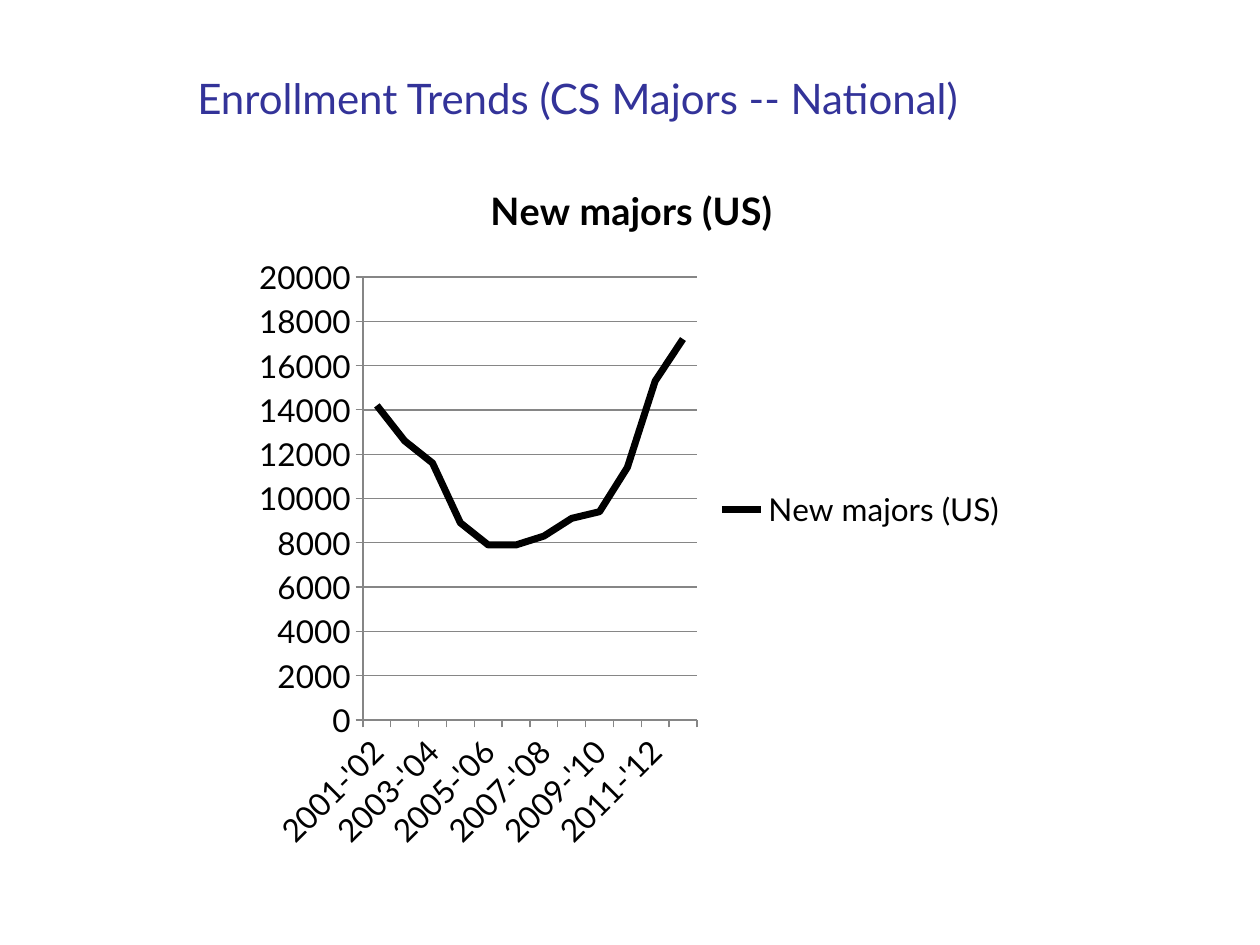
from pptx import Presentation
from pptx.chart.data import CategoryChartData
from pptx.dml.color import RGBColor
from pptx.enum.chart import XL_CHART_TYPE, XL_LEGEND_POSITION, XL_MARKER_STYLE, XL_TICK_MARK
from pptx.enum.text import MSO_ANCHOR
from pptx.oxml import parse_xml
from pptx.oxml.ns import nsdecls
from pptx.util import Emu, Pt

LINE_CHART = XL_CHART_TYPE.LINE
LEGEND_RIGHT = XL_LEGEND_POSITION.RIGHT
NO_MARKER = XL_MARKER_STYLE.NONE
TICK_OUTSIDE = XL_TICK_MARK.OUTSIDE
ANCHOR_BOTTOM = MSO_ANCHOR.BOTTOM

PIXELS_PER_INCH = 126
FONT = "Lato"
BLACK = "000000"
GRAY = "868686"
BLUE = "333399"

FIRST_YEAR = 2001
NEW_MAJORS = [14200, 12600, 11600, 8900, 7900, 7900,
              8300, 9100, 9400, 11400, 15300, 17200]


def px(length):
    return Emu(round(length * 914400 / PIXELS_PER_INCH))


def color(hex_string):
    return RGBColor.from_string(hex_string)


class SlideBuilder:
    def __init__(self, slide, font):
        self.slide = slide
        self.font = font

    def style_font(self, font, size, hex_string, bold=False):
        font.name = self.font
        font.size = Pt(size)
        font.bold = bold
        font.color.rgb = color(hex_string)

    def add_run(self, paragraph, text, size, hex_string, bold=False):
        run = paragraph.add_run()
        run.text = text
        self.style_font(run.font, size, hex_string, bold)

    def add_title(self, text, left, top, width, height):
        shape = self.slide.shapes.add_textbox(px(left), px(top), px(width), px(height))
        frame = shape.text_frame
        frame.word_wrap = True
        frame.vertical_anchor = ANCHOR_BOTTOM
        self.add_run(frame.paragraphs[0], text, 24, BLUE)

    def style_axis(self, axis):
        axis.major_tick_mark = TICK_OUTSIDE
        axis.format.line.color.rgb = color(GRAY)
        axis.format.line.width = Pt(0.75)
        self.style_font(axis.tick_labels.font, 18, BLACK)

    def add_line_chart(self, name, categories, values, left, top, width, height, plot):
        data = CategoryChartData()
        data.categories = categories
        data.add_series(name, values)
        frame = self.slide.shapes.add_chart(
            LINE_CHART, px(left), px(top), px(width), px(height), data)
        chart = frame.chart
        self.style_font(chart.font, 18, BLACK)

        # Chart title and legend
        chart.has_title = True
        paragraph = chart.chart_title.text_frame.paragraphs[0]
        self.add_run(paragraph, name, 21.6, BLACK, bold=True)
        chart.has_legend = True
        chart.legend.position = LEGEND_RIGHT
        chart.legend.include_in_layout = False
        self.style_font(chart.legend.font, 18, BLACK)

        # Axes
        for axis in (chart.category_axis, chart.value_axis):
            self.style_axis(axis)
        label_body = chart.category_axis.tick_labels.font._element.getparent().getparent().getparent()
        label_body.bodyPr.set("rot", "-2700000")
        value_axis = chart.value_axis
        value_axis.minimum_scale = 0
        value_axis.maximum_scale = 20000
        value_axis.major_unit = 2000
        value_axis.has_major_gridlines = True
        gridline = value_axis.major_gridlines.format.line
        gridline.color.rgb = color(GRAY)
        gridline.width = Pt(0.75)

        # Series
        chart.plots[0].vary_by_categories = False
        series = chart.plots[0].series[0]
        series.smooth = False
        series.marker.style = NO_MARKER
        series.format.line.color.rgb = color(BLACK)
        series.format.line.width = Pt(4)

        # Plot area position, as fractions of the chart
        plot_left, plot_top, plot_width, plot_height = plot
        fractions = {"x": (plot_left - left) / width, "y": (plot_top - top) / height,
                     "w": plot_width / width, "h": plot_height / height}
        modes = "".join(f'<c:{key}Mode val="edge"/>' for key in "xy")
        sizes = "".join(f'<c:{key} val="{value:.4f}"/>' for key, value in fractions.items())
        layout = parse_xml(
            f'<c:layout {nsdecls("c")}><c:manualLayout><c:layoutTarget val="inner"/>'
            f'{modes}{sizes}</c:manualLayout></c:layout>')
        plot_area = chart._chartSpace.chart.plotArea
        for old_layout in plot_area.xpath("c:layout"):
            plot_area.remove(old_layout)
        plot_area.insert(0, layout)


def main():
    presentation = Presentation()
    presentation.slide_width = px(1260)
    presentation.slide_height = px(945)
    slide = presentation.slides.add_slide(presentation.slide_layouts[6])
    builder = SlideBuilder(slide, FONT)

    # Heading
    builder.add_title("Enrollment Trends (CS Majors -- National)", 185, 28, 842, 101)

    # Enrollment by academic year
    years = range(FIRST_YEAR, FIRST_YEAR + len(NEW_MAJORS))
    categories = [f"{year}-'{(year + 1) % 100:02d}" for year in years]
    builder.add_line_chart("New majors (US)", categories, NEW_MAJORS,
                           243, 155, 777, 709, plot=(363, 277, 334, 443))

    presentation.save("out.pptx")


if __name__ == "__main__":
    main()
